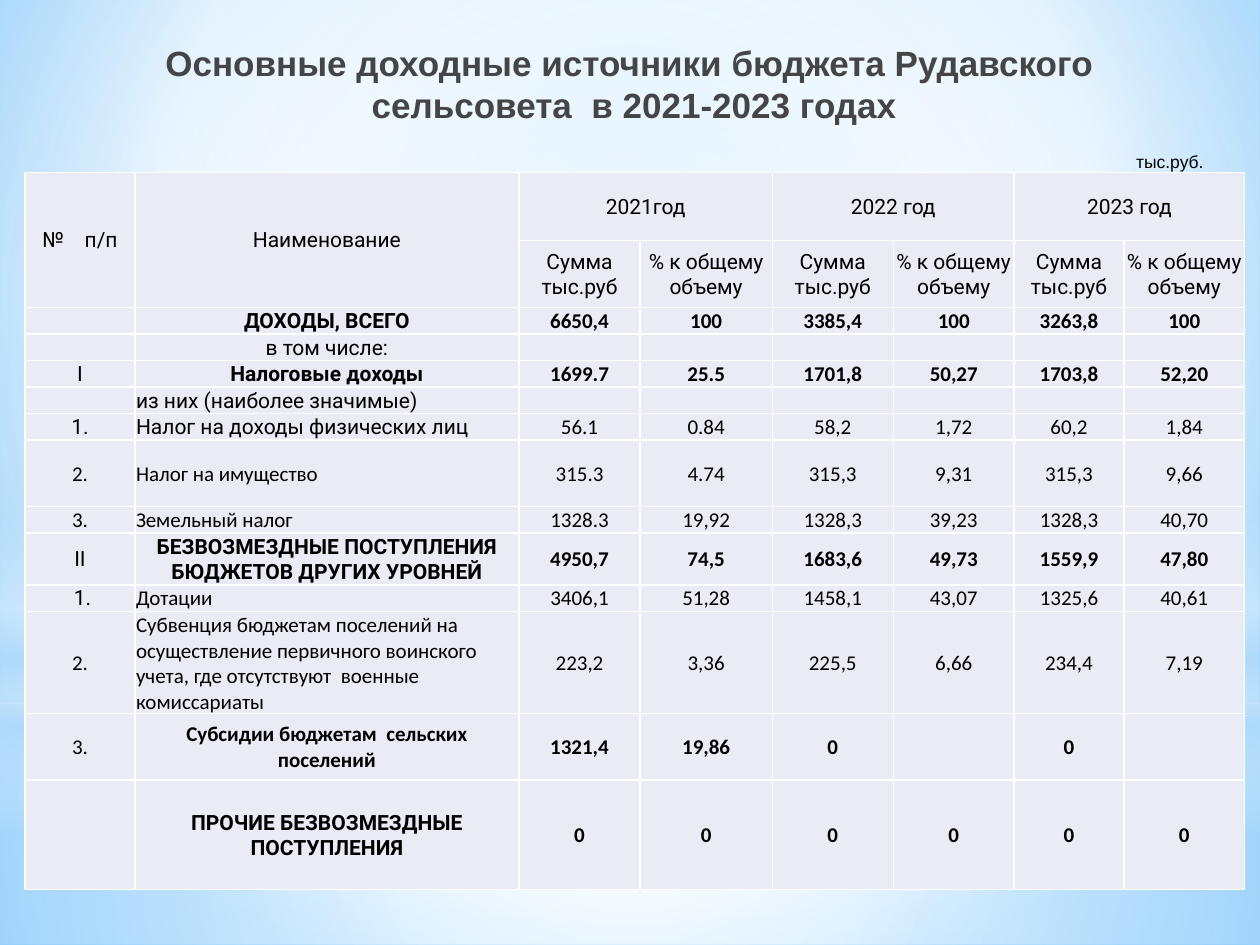
from lxml import etree
from pptx import Presentation
from pptx.dml.color import RGBColor
from pptx.enum.shapes import MSO_SHAPE as Shape
from pptx.enum.text import MSO_ANCHOR as Anchor, PP_ALIGN as Align
from pptx.oxml import parse_xml
from pptx.oxml.ns import nsdecls, qn
from pptx.util import Inches, Pt

COLORS = {"ink": "000000", "title": "454545", "cell": "E9EBF5", "border": "FFFFFF",
          "white": "FFFFFF", "haze": "B4DCFA", "sky": "9ED5FF", "deep": "5BB9FF"}

TITLE = "Основные доходные источники бюджета Рудавского  сельсовета  в 2021-2023 годах"
UNIT = "тыс.руб."
HEADERS = ["№    п/п", "Наименование"]
YEARS = ["2021год", "2022 год", "2023 год"]
YEAR_COLUMNS = ["Сумма тыс.руб", "% к общему объему"]

ROBOTO, CALIBRI = "Roboto", "Calibri"
# number, number font, name, name font, name alignment, bold, values, row height
ROWS = [
    ("", ROBOTO, "ДОХОДЫ, ВСЕГО", ROBOTO, Align.CENTER, True,
     ["6650,4", "100", "3385,4", "100", "3263,8", "100"], 0.21),
    ("", ROBOTO, "в том числе:", ROBOTO, Align.CENTER, False, [""] * 6, 0.21),
    ("I", ROBOTO, "Налоговые доходы", ROBOTO, Align.CENTER, True,
     ["1699.7", "25.5", "1701,8", "50,27", "1703,8", "52,20"], 0.21),
    ("", ROBOTO, "из них (наиболее значимые)", ROBOTO, Align.LEFT, False, [""] * 6, 0.21),
    ("1.", ROBOTO, "Налог на доходы физических лиц", ROBOTO, Align.LEFT, False,
     ["56.1", "0.84", "58,2", "1,72", "60,2", "1,84"], 0.21),
    ("2.", CALIBRI, "Налог на имущество", CALIBRI, Align.LEFT, False,
     ["315.3", "4.74", "315,3", "9,31", "315,3", "9,66"], 0.53),
    ("3.", CALIBRI, "Земельный налог", CALIBRI, Align.LEFT, False,
     ["1328.3", "19,92", "1328,3", "39,23", "1328,3", "40,70"], 0.21),
    ("II", ROBOTO, "БЕЗВОЗМЕЗДНЫЕ ПОСТУПЛЕНИЯ БЮДЖЕТОВ ДРУГИХ УРОВНЕЙ", ROBOTO,
     Align.CENTER, True, ["4950,7", "74,5", "1683,6", "49,73", "1559,9", "47,80"], 0.41),
    (" 1.", ROBOTO, "Дотации", CALIBRI, Align.LEFT, False,
     ["3406,1", "51,28", "1458,1", "43,07", "1325,6", "40,61"], 0.21),
    ("2.", CALIBRI, "Субвенция бюджетам поселений на осуществление первичного воинского "
     "учета, где отсутствуют  военные комиссариаты", CALIBRI, Align.LEFT, False,
     ["223,2", "3,36", "225,5", "6,66", "234,4", "7,19"], 0.81),
    ("3.", CALIBRI, "Субсидии бюджетам  сельских поселений", CALIBRI, Align.CENTER, True,
     ["1321,4", "19,86", "0", "", "0", ""], 0.53),
    ("", ROBOTO, "ПРОЧИЕ БЕЗВОЗМЕЗДНЫЕ ПОСТУПЛЕНИЯ", ROBOTO, Align.CENTER, True,
     ["0"] * 6, 0.87),
]
COLUMN_WIDTHS = [0.87, 3.05, 0.96, 1.05, 0.96, 0.96, 0.87, 0.96]
HEADER_HEIGHTS = [0.54, 0.53]

CIRCLE = '<a:path path="circle"><a:fillToRect l="{}000" t="{}000" r="{}000" b="{}000"/></a:path>'
CENTERED = CIRCLE.format(50, 50, 50, 50)
DOWNWARD = '<a:lin ang="5400000" scaled="0"/>'
# preset, top, height, gradient stops (position, color, opacity), direction
BACKDROP = [
    (Shape.RECTANGLE, 5.58, 1.92,
     [(0, "white", 91), (37, "white", 76), (100, "haze", 79)], CENTERED),
    (Shape.RECTANGLE, 0, 5.58,
     [(0, "white", 89), (48, "white", 62), (100, "haze", 79)], CENTERED),
    (Shape.RECTANGLE, 4.12, 2.5,
     [(0, "white", 0), (29, "white", 30), (45, "haze", 40), (55, "white", 26),
      (65, "haze", 60), (100, "white", 0)], DOWNWARD),
    (Shape.OVAL, 1.75, 5.58, [(0, "white", 100), (56, "white", 0)], CENTERED),
]


def gradient(stops, direction):
    stop_xml = "".join(
        f'<a:gs pos="{position}000"><a:srgbClr val="{COLORS[color]}">'
        f'<a:alpha val="{opacity}000"/></a:srgbClr></a:gs>'
        for position, color, opacity in stops)
    return parse_xml(f'<a:gradFill {nsdecls("a")} rotWithShape="1">'
                     f'<a:gsLst>{stop_xml}</a:gsLst>{direction}</a:gradFill>')


def replace_fill(holder, fill):
    """Swap the solid fill inside an XML element for another fill."""
    holder.replace(holder.find(qn("a:solidFill")), fill)


def write(frame, text, font_name, size, color="ink", bold=False, align=Align.CENTER):
    frame.word_wrap = True
    paragraph = frame.paragraphs[0]
    if text:
        paragraph.text = text
    paragraph.alignment = align
    font = paragraph.font
    font.name, font.size, font.bold = font_name, Pt(size), bold
    font.color.rgb = RGBColor.from_string(COLORS[color])


def format_cell(cell, text, font_name=ROBOTO, bold=False, align=Align.CENTER):
    cell.margin_left = cell.margin_right = cell.margin_top = Inches(0.01)
    cell.margin_bottom = 0
    cell.vertical_anchor = Anchor.MIDDLE
    properties = cell._tc.get_or_add_tcPr()
    for side in ("lnL", "lnR", "lnT", "lnB"):
        line = etree.SubElement(properties, qn(f"a:{side}"), w=str(Pt(1)))
        solid = etree.SubElement(line, qn("a:solidFill"))
        etree.SubElement(solid, qn("a:srgbClr"), val=COLORS["border"])
    cell.fill.solid()
    cell.fill.fore_color.rgb = RGBColor.from_string(COLORS["cell"])
    write(cell.text_frame, text, font_name, 12, bold=bold, align=align)


def add_backdrop(slide):
    background = slide.background.fill
    background.solid()
    background.fore_color.rgb = RGBColor.from_string(COLORS["sky"])
    sky = gradient([(0, "sky", 100), (60, "white", 100), (100, "deep", 100)],
                   CIRCLE.format(20, 10, 20, 60))
    replace_fill(slide._element.find(".//" + qn("p:bgPr")), sky)
    for preset, top, height, stops, direction in BACKDROP:
        glow = slide.shapes.add_shape(preset, 0, Inches(top), Inches(10), Inches(height))
        glow.shadow.inherit = False
        glow.line.fill.background()
        glow.fill.solid()
        replace_fill(glow._element.spPr, gradient(stops, direction))


def add_headings(slide):
    title = slide.shapes.title
    slide.shapes._spTree.append(title._element)  # bring in front of the backdrop
    title.left, title.top = Inches(1.21), Inches(0.28)
    title.width, title.height = Inches(7.57), Inches(1.25)
    title.text_frame.vertical_anchor = Anchor.TOP
    write(title.text_frame, TITLE, "Arial", 20, color="title", bold=True)
    unit = slide.shapes.add_textbox(Inches(7.92), Inches(1.15), Inches(1.73), Inches(0.27))
    write(unit.text_frame, UNIT, "Arial", 10, align=Align.RIGHT)


def add_income_table(slide):
    heights = HEADER_HEIGHTS + [row[-1] for row in ROWS]
    table = slide.shapes.add_table(
        len(heights), len(COLUMN_WIDTHS), Inches(0.2), Inches(1.37),
        Inches(sum(COLUMN_WIDTHS)), Inches(sum(heights))).table
    table.first_row = table.horz_banding = False
    for column, width in zip(table.columns, COLUMN_WIDTHS):
        column.width = Inches(width)
    for row, height in zip(table.rows, heights):
        row.height = Inches(height)

    top_header = HEADERS + [text for year in YEARS for text in (year, "")]
    sub_header = ["", ""] + YEAR_COLUMNS * len(YEARS)
    for row, texts in enumerate([top_header, sub_header]):
        for column, text in enumerate(texts):
            format_cell(table.cell(row, column), text)
    for column in range(len(HEADERS)):
        table.cell(0, column).merge(table.cell(1, column))
    for column in range(len(HEADERS), len(COLUMN_WIDTHS), 2):
        table.cell(0, column).merge(table.cell(0, column + 1))

    for row, (number, number_font, name, name_font, align, bold, values, _) in enumerate(
            ROWS, start=len(HEADER_HEIGHTS)):
        format_cell(table.cell(row, 0), number, number_font)
        format_cell(table.cell(row, 1), name, name_font, bold, align)
        for column, value in enumerate(values, start=2):
            format_cell(table.cell(row, column), value, CALIBRI, bold)


def main():
    prs = Presentation()
    prs.slide_width, prs.slide_height = Inches(10), Inches(7.5)
    slide = prs.slides.add_slide(prs.slide_layouts[5])
    add_backdrop(slide)
    add_headings(slide)
    add_income_table(slide)
    prs.save("out.pptx")


if __name__ == "__main__":
    main()
